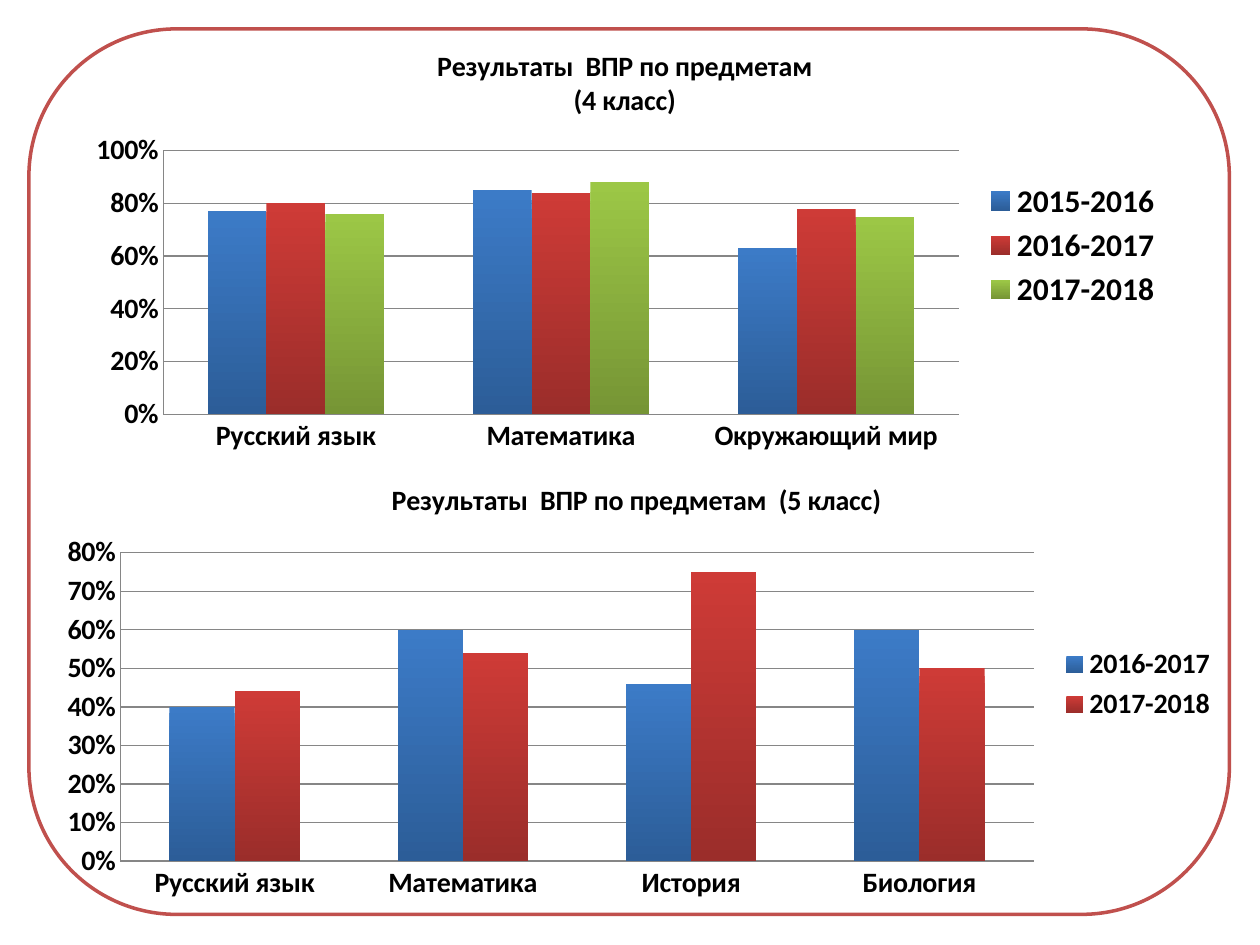
from dataclasses import dataclass

from pptx import Presentation
from pptx.chart.data import CategoryChartData
from pptx.dml.color import RGBColor
from pptx.enum.chart import XL_CHART_TYPE, XL_LEGEND_POSITION, XL_TICK_MARK
from pptx.enum.shapes import MSO_SHAPE
from pptx.util import Pt

COLUMNS = XL_CHART_TYPE.COLUMN_CLUSTERED
LEGEND_RIGHT = XL_LEGEND_POSITION.RIGHT
NO_TICKS = XL_TICK_MARK.NONE
ROUNDED = MSO_SHAPE.ROUNDED_RECTANGLE
BLANK_LAYOUT = 6


@dataclass(frozen=True)
class Theme:
    font: str = "Calibri"
    text: str = "000000"
    paper: str = "FFFFFF"
    frame: str = "C0504D"
    grid: str = "868686"
    # Top and bottom colour of the columns of each series
    columns: tuple = (("3C7BC7", "2C5D98"), ("CE3B37", "9B2D2A"), ("9CC746", "769535"))
    size: int = 16
    large_size: int = 18


theme = Theme()


def style_font(font, size=theme.size, bold=True, color=theme.text):
    font.name = theme.font
    font.size = Pt(size)
    font.bold = bold
    font.color.rgb = RGBColor.from_string(color)


def write_text(frame, text, **style):
    """Write each line of the text as a paragraph of the frame."""
    for index, line in enumerate(text.split("\n")):
        para = frame.add_paragraph() if index else frame.paragraphs[0]
        span = para.add_run()
        span.text = line
        style_font(span.font, **style)


deck = Presentation()
deck.slide_width, deck.slide_height = Pt(720), Pt(540)
page = deck.slides.add_slide(deck.slide_layouts[BLANK_LAYOUT])

# Rounded frame
box = page.shapes.add_shape(ROUNDED, Pt(16.5), Pt(16.5), Pt(686), Pt(506))
box.shadow.inherit = False
box.fill.solid()
box.fill.fore_color.rgb = RGBColor.from_string(theme.paper)
box.line.color.rgb = RGBColor.from_string(theme.frame)
box.line.width = Pt(2)

# Results by grade: title, place, top of scale, step, legend size, subjects, years
grades = [
    ("Результаты  ВПР по предметам\n(4 класс)",
     (42.5, 16.5, 629, 247.5), 1, 0.2, theme.large_size,
     ["Русский язык", "Математика", "Окружающий мир"],
     {"2015-2016": (0.77, 0.85, 0.63),
      "2016-2017": (0.8, 0.84, 0.78),
      "2017-2018": (0.76, 0.88, 0.75)}),
    ("Результаты  ВПР по предметам  (5 класс)",
     (25, 263, 677.5, 256.5), 0.8, 0.1, theme.size,
     ["Русский язык", "Математика", "История", "Биология"],
     {"2016-2017": (0.4, 0.6, 0.46, 0.6),
      "2017-2018": (0.44, 0.54, 0.75, 0.5)}),
]

for title, place, top, step, legend_size, subjects, years in grades:
    data = CategoryChartData(number_format="0%")
    data.categories = subjects
    for year, values in years.items():
        data.add_series(year, values)
    chart = page.shapes.add_chart(COLUMNS, *map(Pt, place), data).chart
    style_font(chart.font)

    # Title and legend
    chart.has_title = True
    write_text(chart.chart_title.text_frame, title)
    chart.chart_title.include_in_layout = False
    chart.has_legend = True
    chart.legend.position = LEGEND_RIGHT
    chart.legend.include_in_layout = False
    style_font(chart.legend.font, size=legend_size)

    # Axes
    for axis in (chart.category_axis, chart.value_axis):
        axis.major_tick_mark = axis.minor_tick_mark = NO_TICKS
        axis.format.line.color.rgb = RGBColor.from_string(theme.grid)
        style_font(axis.tick_labels.font)
    scale = chart.value_axis
    scale.minimum_scale, scale.maximum_scale, scale.major_unit = 0, top, step
    scale.tick_labels.number_format = "0%"
    scale.tick_labels.number_format_is_linked = False
    scale.has_major_gridlines = True
    scale.major_gridlines.format.line.color.rgb = RGBColor.from_string(theme.grid)

    # Columns, shaded from top to bottom
    plot = chart.plots[0]
    plot.gap_width, plot.overlap = 150, 0
    plot.vary_by_categories = False
    for series, shades in zip(plot.series, theme.columns):
        fill = series.format.fill
        fill.gradient()
        fill.gradient_angle = 270
        for stop, shade, position in zip(fill.gradient_stops, shades, (0, 1)):
            stop.color.rgb = RGBColor.from_string(shade)
            stop.position = position

deck.save("out.pptx")
